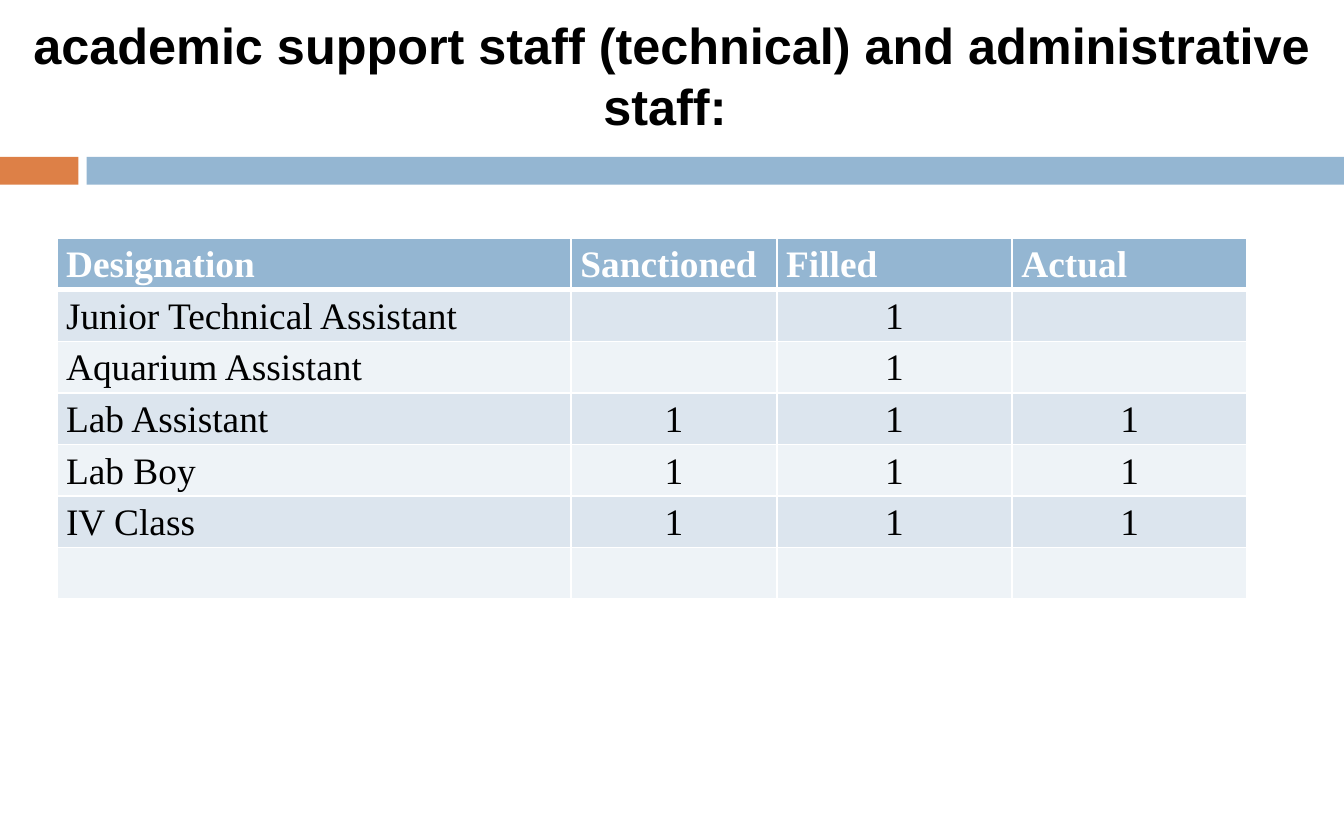
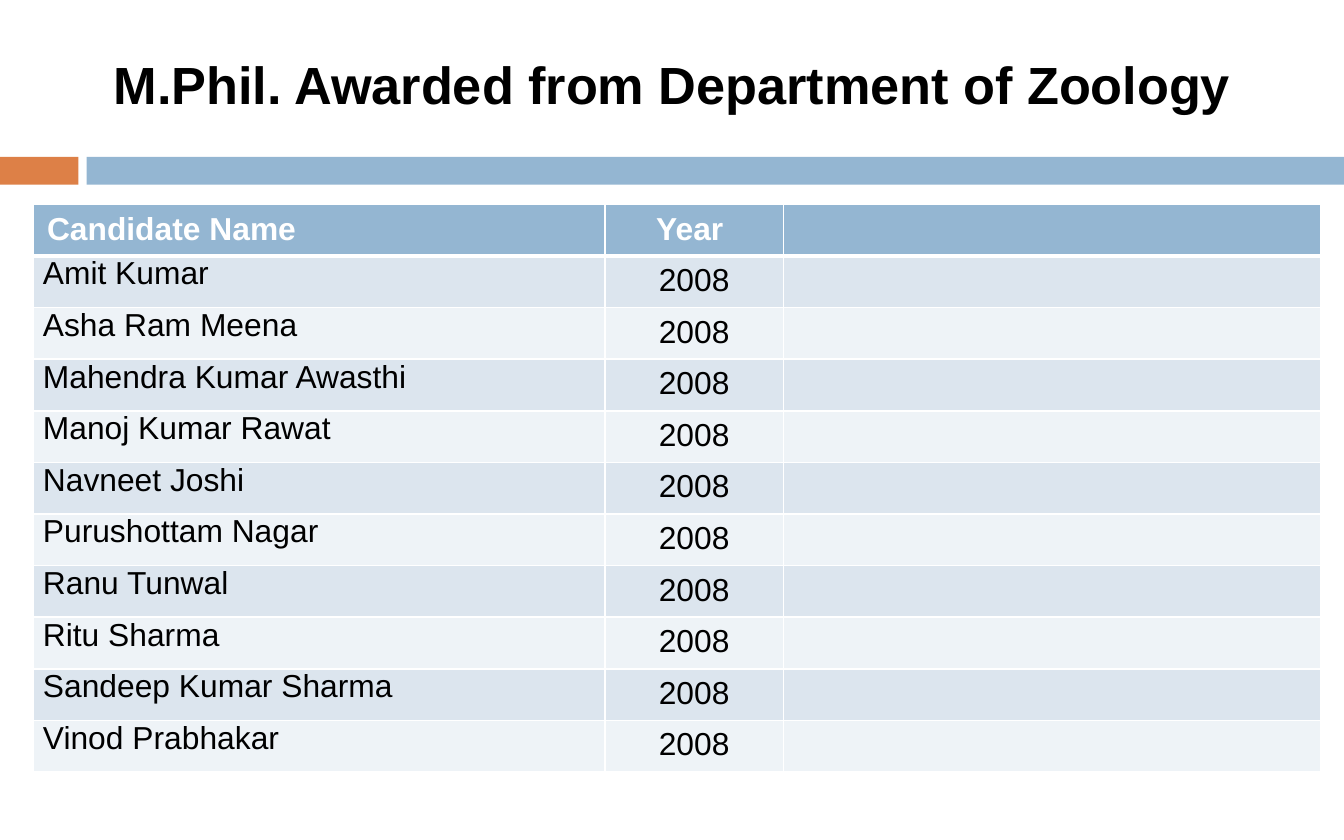
from dataclasses import dataclass

from lxml import etree
from pptx import Presentation
from pptx import util as u
from pptx.dml import color
from pptx.enum import shapes, text
from pptx.oxml import ns

Pt = u.Pt
LEFT, CENTER, JUSTIFY = text.PP_ALIGN.LEFT, text.PP_ALIGN.CENTER, text.PP_ALIGN.JUSTIFY
TIGHT = (5, 0)
ROOMY = (7.2, 3.6)


@dataclass(frozen=True)
class Theme:
    accent: str = "DD8047"
    band: str = "94B6D2"
    stripes: tuple = ("DCE5EE", "EEF3F7")
    ink: str = "000000"
    paper: str = "FFFFFF"
    sans: str = "Arial"
    serif: str = "Times New Roman"
    long_title: float = 27
    title: float = 28
    staff: float = 20
    awards: float = 17
    rule: float = 1
    header_rule: float = 3


@dataclass(frozen=True)
class Column:
    width: float
    header_align: text.PP_ALIGN
    body_align: text.PP_ALIGN
    header_inset: tuple = TIGHT
    body_inset: tuple = TIGHT


class Deck:
    def __init__(self, theme):
        self.theme = theme
        self.prs = Presentation()
        self.prs.slide_width, self.prs.slide_height = Pt(720), Pt(450)
        self.slide = None

    def add_slide(self):
        self.slide = self.prs.slides.add_slide(self.prs.slide_layouts[6])
        self.bar(0, 42, self.theme.accent)
        self.bar(46.5, 673.5, self.theme.band)

    def bar(self, left, width, fill):
        bar = self.slide.shapes.add_shape(
            shapes.MSO_SHAPE.RECTANGLE, Pt(left), Pt(84), Pt(width), Pt(15))
        bar.shadow.inherit = False
        bar.fill.solid()
        bar.fill.fore_color.rgb = color.RGBColor.from_string(fill)
        bar.line.fill.background()

    def set_words(self, frame, words, font, size, ink, bold, align, spacing=None):
        frame.text = words
        paragraph = frame.paragraphs[0]
        paragraph.alignment = align
        if spacing:
            paragraph.line_spacing = spacing
        for run in paragraph.runs:
            run.font.name, run.font.size, run.font.bold = font, Pt(size), bold
            run.font.color.rgb = color.RGBColor.from_string(ink)

    def title(self, words, top, height, size):
        frame = self.slide.shapes.add_textbox(0, Pt(top), Pt(720), Pt(height)).text_frame
        frame.word_wrap = True
        frame.vertical_anchor = text.MSO_ANCHOR.MIDDLE
        self.set_words(frame, words, self.theme.sans, size, self.theme.ink, True, CENTER)

    def borders(self, cell, top, bottom):
        props = cell._tc.get_or_add_tcPr()
        rule = self.theme.rule
        for side, width in (("L", rule), ("R", rule), ("T", top), ("B", bottom)):
            line = etree.SubElement(props, ns.qn(f"a:ln{side}"), w=str(Pt(width)))
            fill = etree.SubElement(line, ns.qn("a:solidFill"))
            etree.SubElement(fill, ns.qn("a:srgbClr"), val=self.theme.paper)

    def table(self, left, top, row_height, columns, rows, font, size, spacing=None):
        theme = self.theme
        width = sum(column.width for column in columns)
        grid = self.slide.shapes.add_table(
            len(rows), len(columns), Pt(left), Pt(top),
            Pt(width), Pt(row_height * len(rows))).table
        for grid_column, column in zip(grid.columns, columns):
            grid_column.width = Pt(column.width)
        for r, values in enumerate(rows):
            grid.rows[r].height = Pt(row_height)
            header = r == 0
            fill = theme.band if header else theme.stripes[(r - 1) % 2]
            for c, (column, value) in enumerate(zip(columns, values)):
                cell = grid.cell(r, c)
                side, edge = column.header_inset if header else column.body_inset
                cell.margin_left = cell.margin_right = Pt(side)
                cell.margin_top = cell.margin_bottom = Pt(edge)
                self.borders(cell, theme.header_rule if r == 1 else theme.rule,
                             theme.header_rule if header else theme.rule)
                cell.fill.solid()
                cell.fill.fore_color.rgb = color.RGBColor.from_string(fill)
                self.set_words(cell.text_frame, value, font, size,
                               theme.paper if header else theme.ink, header,
                               column.header_align if header else column.body_align,
                               spacing)


def staff_slide(deck):
    deck.add_slide()
    deck.title("academic support staff (technical) and administrative staff: ",
               0, 80, deck.theme.long_title)
    columns = [Column(275.5, JUSTIFY, LEFT)]
    columns += [Column(width, JUSTIFY, CENTER) for width in (110.3, 126, 126)]
    rows = [
        ("Designation", "Sanctioned", "Filled", "Actual "),
        ("Junior Technical Assistant", "", "1", ""),
        ("Aquarium Assistant", "", "1", ""),
        ("Lab Assistant", "1", "1", "1"),
        ("Lab Boy ", "1", "1", "1"),
        ("IV Class", "1", "1", "1"),
        ("", "", "", ""),
    ]
    deck.table(30.4, 127.6, 27.55, columns, rows,
               deck.theme.serif, deck.theme.staff, 1.15)


def awards_slide(deck):
    deck.add_slide()
    columns = [
        Column(306, LEFT, LEFT, header_inset=ROOMY),
        Column(95.8, CENTER, CENTER, ROOMY, ROOMY),
        Column(288, LEFT, LEFT),
    ]
    candidates = [
        "Amit Kumar", "Asha Ram Meena", "Mahendra Kumar Awasthi",
        "Manoj Kumar Rawat", "Navneet Joshi", "Purushottam Nagar",
        "Ranu Tunwal", "Ritu Sharma", "Sandeep Kumar Sharma", "Vinod Prabhakar",
    ]
    rows = [("Candidate Name", "Year ", "")]
    rows += [(candidate, "2008", "") for candidate in candidates]
    deck.table(18, 109.5, 27.36, columns, rows, deck.theme.sans, deck.theme.awards)
    deck.title("M.Phil. Awarded from Department of Zoology", 15, 60, deck.theme.title)


def main():
    deck = Deck(Theme())
    staff_slide(deck)
    awards_slide(deck)
    deck.prs.save("out.pptx")


if __name__ == "__main__":
    main()
